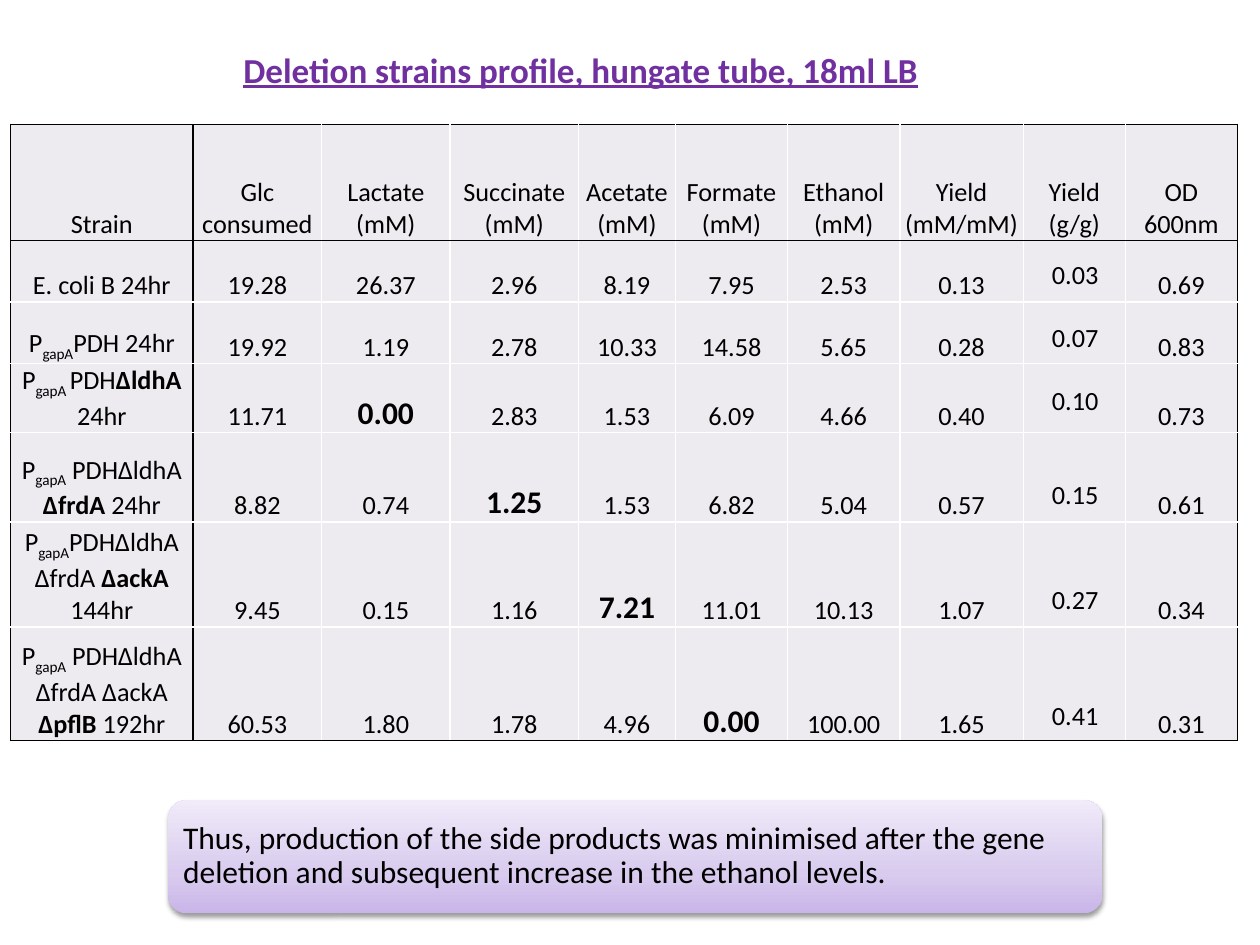
"""Build the slide that profiles the deletion strains."""
from dataclasses import dataclass

from lxml.etree import SubElement
from pptx import Presentation
from pptx.dml.color import RGBColor
from pptx.enum.shapes import MSO_SHAPE
from pptx.enum.text import MSO_ANCHOR, PP_ALIGN
from pptx.oxml import parse_xml
from pptx.oxml.ns import nsdecls, qn
from pptx.util import Pt


@dataclass(frozen=True)
class Theme:
    font: str = "Calibri"
    ink: str = "000000"
    title: str = "7030A0"
    cell: str = "EDEAF0"
    grid: str = "FFFFFF"
    gradient: tuple = ((0, "C9B5E8"), (35, "D8CBEE"), (100, "F0EAF9"))
    title_size: float = 20
    body_size: float = 15
    strong_size: float = 18


THEME = Theme()
TITLE = "Deletion strains profile, hungate tube, 18ml LB"
CONCLUSION = ("Thus, production of the side products was minimised after the gene "
              "deletion and subsequent increase in the ethanol levels.")
HEADERS = ["Strain", "Glc consumed", "Lactate (mM)", "Succinate (mM)", "Acetate (mM)",
           "Formate (mM)", "Ethanol (mM)", "Yield (mM/mM)", "Yield (g/g)", "OD 600nm"]
PROMOTER = [("P", ""), ("gapA", "sub")]
STRAINS = [
    [("E. coli B 24hr", "")],
    PROMOTER + [("PDH 24hr", "")],
    [("P", ""), ("gapA ", "sub"), ("PDH", ""), ("ΔldhA ", "bold"), ("24hr", "")],
    PROMOTER + [(" PDHΔldhA ", ""), ("ΔfrdA ", "bold"), ("24hr", "")],
    PROMOTER + [("PDHΔldhA ΔfrdA ", ""), ("ΔackA ", "bold"), ("144hr", "")],
    PROMOTER + [(" PDHΔldhA ΔfrdA ΔackA ", ""), ("ΔpflB ", "bold"), ("192hr", "")],
]
VALUES = [
    ["19.28", "26.37", "2.96", "8.19", "7.95", "2.53", "0.13", "", "0.69"],
    ["19.92", "1.19", "2.78", "10.33", "14.58", "5.65", "0.28", "", "0.83"],
    ["11.71", "0.00", "2.83", "1.53", "6.09", "4.66", "0.40", "", "0.73"],
    ["8.82", "0.74", "1.25", "1.53", "6.82", "5.04", "0.57", "", "0.61"],
    ["9.45", "0.15", "1.16", "7.21", "11.01", "10.13", "1.07", "", "0.34"],
    ["60.53", "1.80", "1.78", "4.96", "0.00", "100.00", "1.65", "", "0.31"],
]
BLOCKED_PRODUCTS = {(3, 2), (4, 3), (5, 4), (6, 5)}
MASS_YIELDS = [("0.03", 144), ("0.07", 180), ("0.10", 216),
               ("0.15", 270), ("0.27", 330), ("0.41", 396)]
COLUMN_WIDTHS = [104.4, 73.4, 73.4, 73.4, 55.4, 64.1, 64.1, 70.6, 58.3, 64.1]
ROW_HEIGHTS = [66.2, 35.2, 35.2, 35.2, 51, 60, 65]


def write(frame, text, size=THEME.body_size, color=THEME.ink, bold=False,
          underline=False, align=PP_ALIGN.LEFT, spacing=None):
    """Write a string, or a list of (string, style) spans, as one paragraph."""
    frame.word_wrap = True
    para = frame.paragraphs[0]
    para.alignment = align
    if spacing:
        para.line_spacing = spacing
    for words, style in [(text, "")] if isinstance(text, str) else text:
        span = para.add_run()
        span.text = words
        span.font.name = THEME.font
        span.font.size = Pt(size)
        span.font.bold = bold or style == "bold"
        span.font.underline = underline
        span.font.color.rgb = RGBColor.from_string(color)
        if style == "sub":
            span.font._element.set("baseline", "-25000")


def add_text(shapes, text, left, top, width, height, margin=None,
             anchor=MSO_ANCHOR.TOP, **style):
    """Add a text box."""
    box = shapes.add_textbox(Pt(left), Pt(top), Pt(width), Pt(height))
    frame = box.text_frame
    frame.vertical_anchor = anchor
    if margin is not None:
        frame.margin_left = frame.margin_right = Pt(margin)
        frame.margin_top = frame.margin_bottom = Pt(margin)
    write(frame, text, **style)


def draw_borders(cell, row, column):
    """Frame the table, its header and its first column in ink, the rest in white."""
    last_row, last_column = len(ROW_HEIGHTS) - 1, len(COLUMN_WIDTHS) - 1
    inked = {"lnL": column in (0, 1), "lnR": column in (0, last_column),
             "lnT": row in (0, 1), "lnB": row in (0, last_row)}
    properties = cell._tc.get_or_add_tcPr()
    for side, is_inked in inked.items():
        line = SubElement(properties, qn(f"a:{side}"), w=str(Pt(1)))
        fill = SubElement(line, qn("a:solidFill"))
        SubElement(fill, qn("a:srgbClr"), val=THEME.ink if is_inked else THEME.grid)


def add_profile_table(page):
    """Add the strain table."""
    rows = [HEADERS] + [[strain] + values for strain, values in zip(STRAINS, VALUES)]
    table = page.shapes.add_table(len(rows), len(HEADERS), Pt(6), Pt(71.2),
                                  Pt(sum(COLUMN_WIDTHS)), Pt(sum(ROW_HEIGHTS))).table
    table.first_row = table.horz_banding = False
    for column, width in zip(table.columns, COLUMN_WIDTHS):
        column.width = Pt(width)
    for row_index, (row, height) in enumerate(zip(rows, ROW_HEIGHTS)):
        table.rows[row_index].height = Pt(height)
        for column_index, text in enumerate(row):
            cell = table.cell(row_index, column_index)
            draw_borders(cell, row_index, column_index)
            cell.fill.solid()
            cell.fill.fore_color.rgb = RGBColor.from_string(THEME.cell)
            cell.vertical_anchor = MSO_ANCHOR.BOTTOM
            cell.margin_left = cell.margin_right = cell.margin_top = Pt(0.72)
            cell.margin_bottom = Pt(0)
            if text:
                strong = (row_index, column_index) in BLOCKED_PRODUCTS
                size = THEME.strong_size if strong else THEME.body_size
                write(cell.text_frame, text, size=size, bold=strong,
                      align=PP_ALIGN.CENTER)


def add_conclusion(page):
    """Add the shaded panel with the closing statement."""
    group = page.shapes.add_group_shape()
    panel = group.shapes.add_shape(MSO_SHAPE.ROUNDED_RECTANGLE,
                                   Pt(96), Pt(457.2), Pt(534), Pt(64.8))
    panel.line.fill.background()
    stops = "".join(f'<a:gs pos="{place * 1000}"><a:srgbClr val="{color}"/></a:gs>'
                    for place, color in THEME.gradient)
    gradient = parse_xml(f'<a:gradFill {nsdecls("a")}><a:gsLst>{stops}</a:gsLst>'
                         '<a:lin ang="16200000" scaled="0"/></a:gradFill>')
    shadow = parse_xml(
        f'<a:effectLst {nsdecls("a")}><a:outerShdw blurRad="{Pt(3.1)}" dist="{Pt(1.6)}" '
        f'dir="5400000" rotWithShape="0"><a:srgbClr val="{THEME.ink}">'
        '<a:alpha val="38000"/></a:srgbClr></a:outerShdw></a:effectLst>')
    properties = panel._element.spPr
    properties.find(qn("a:ln")).addprevious(gradient)
    properties.append(shadow)
    add_text(group.shapes, CONCLUSION, 99.2, 460.4, 527.6, 58.4, margin=5.4,
             anchor=MSO_ANCHOR.MIDDLE, size=THEME.strong_size, spacing=0.9)


def main():
    """Build and save the deck."""
    deck = Presentation()
    deck.slide_width, deck.slide_height = Pt(720), Pt(540)
    page = deck.slides.add_slide(deck.slide_layouts[6])
    add_profile_table(page)
    add_text(page.shapes, TITLE, 132, 24, 552, 31.5, size=THEME.title_size,
             color=THEME.title, bold=True, underline=True)
    for value, top in MASS_YIELDS:
        add_text(page.shapes, value, 594, top, 54, 25.2)
    add_conclusion(page)
    deck.save("out.pptx")


if __name__ == "__main__":
    main()
